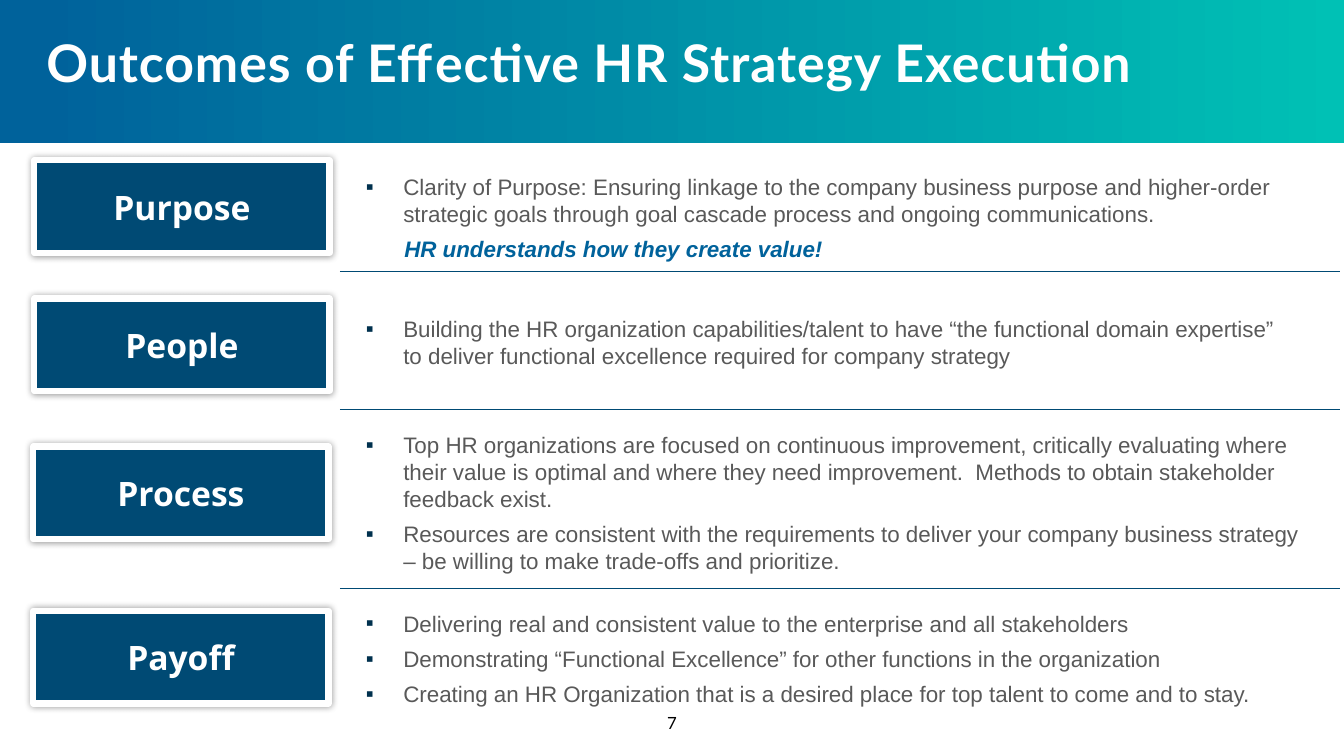
from dataclasses import dataclass

from lxml import etree
from pptx import Presentation
from pptx.dml.color import RGBColor
from pptx.enum.shapes import MSO_CONNECTOR, MSO_SHAPE
from pptx.enum.text import MSO_ANCHOR, MSO_AUTO_SIZE, PP_ALIGN
from pptx.oxml.ns import qn
from pptx.util import Inches, Pt

RECTANGLE = MSO_SHAPE.RECTANGLE
STRAIGHT = MSO_CONNECTOR.STRAIGHT
TOP, MIDDLE = MSO_ANCHOR.TOP, MSO_ANCHOR.MIDDLE
LEFT, CENTER = PP_ALIGN.LEFT, PP_ALIGN.CENTER
FIT_SHAPE, NO_FIT = MSO_AUTO_SIZE.SHAPE_TO_FIT_TEXT, MSO_AUTO_SIZE.NONE
COMPARISON_LAYOUT = 4


@dataclass(frozen=True)
class Theme:
    blue: str = "00629B"
    teal: str = "00C1B5"
    navy: str = "004A74"
    bullet: str = "00314E"
    body: str = "595959"
    white: str = "FFFFFF"
    black: str = "000000"
    title_font: str = "Lato"
    label_font: str = "Open Sans"
    body_font: str = "Arial"
    title_size: int = 37
    label_size: int = 24
    body_size: int = 16
    number_size: int = 12


@dataclass(frozen=True)
class Outcome:
    label: str
    label_box: tuple
    list_box: tuple
    bullets: tuple
    highlight: str = ""


THEME = Theme()
RULE_LEFT, RULE_RIGHT = 3.37, 13.29
RULE_TOPS = (2.69, 4.06, 5.84)
OUTCOMES = (
    Outcome("Purpose", (0.34, 1.59, 2.93, 0.92), (3.4, 1.67, 9.44, 0.99), (
        "Clarity of Purpose: Ensuring linkage to the company business purpose and higher-order "
        "strategic goals through goal cascade process and ongoing communications.",
    ), "HR understands how they create value!"),
    Outcome("People", (0.34, 2.96, 2.93, 0.92), (3.4, 3.08, 9.48, 0.64), (
        "Building the HR organization capabilities/talent to have “the functional domain expertise” "
        "to deliver functional excellence required for company strategy",
    )),
    Outcome("Process", (0.33, 4.43, 2.93, 0.92), (3.4, 4.23, 9.59, 1.53), (
        "Top HR organizations are focused on continuous improvement, critically evaluating where "
        "their value is optimal and where they need improvement.  Methods to obtain stakeholder "
        "feedback exist.",
        "Resources are consistent with the requirements to deliver your company business strategy "
        "– be willing to make trade-offs and prioritize.",
    )),
    Outcome("Payoff", (0.33, 6.06, 2.93, 0.92), (3.4, 6, 9.59, 1.08), (
        "Delivering real and consistent value to the enterprise and all stakeholders",
        "Demonstrating “Functional Excellence” for other functions in the organization",
        "Creating an HR Organization that is a desired place for top talent to come and to stay.",
    )),
)


def color(value):
    return RGBColor.from_string(value)


def place(shape, box):
    shape.left, shape.top, shape.width, shape.height = map(Inches, box)


def set_margins(frame, horizontal, vertical):
    frame.margin_left = frame.margin_right = Inches(horizontal)
    frame.margin_top = frame.margin_bottom = Inches(vertical)


def style_runs(paragraph, font, size, ink, bold=False, italic=False):
    for run in paragraph.runs:
        run.font.name = font
        run.font.size = Pt(size)
        run.font.color.rgb = color(ink)
        run.font.bold = bold
        run.font.italic = italic


def set_indent(paragraph, margin, first_line, bullet=None):
    properties = paragraph._p.get_or_add_pPr()
    properties.set("marL", str(Inches(margin)))
    properties.set("indent", str(Inches(first_line)))
    if bullet:
        bullet_color = etree.SubElement(properties, qn("a:buClr"))
        etree.SubElement(bullet_color, qn("a:srgbClr"), val=THEME.bullet)
        etree.SubElement(properties, qn("a:buFont"), typeface=THEME.body_font)
        etree.SubElement(properties, qn("a:buChar"), char=bullet)
    else:
        etree.SubElement(properties, qn("a:buNone"))


def add_glow(shape):
    effects = etree.SubElement(shape._element.spPr, qn("a:effectLst"))
    shadow = etree.SubElement(effects, qn("a:outerShdw"), blurRad=str(Pt(5)), dist="0", dir="0")
    ink = etree.SubElement(shadow, qn("a:srgbClr"), val=THEME.black)
    etree.SubElement(ink, qn("a:alpha"), val="40000")


def paint_background(slide, panel_box):
    fill = slide.background.fill
    fill.gradient()
    fill.gradient_angle = 0
    stops = ((0.03, THEME.blue), (1, THEME.teal))
    for stop, (position, ink) in zip(fill.gradient_stops, stops):
        stop.position = position
        stop.color.rgb = color(ink)
    panel = slide.shapes.add_shape(RECTANGLE, *map(Inches, panel_box))
    panel.shadow.inherit = False
    panel.fill.solid()
    panel.fill.fore_color.rgb = color(THEME.white)
    panel.line.fill.background()
    slide.shapes._spTree.insert(2, panel._element)


def fill_title(title, box, text):
    place(title, box)
    frame = title.text_frame
    frame.text = text
    frame.word_wrap = True
    frame.auto_size = NO_FIT
    frame.vertical_anchor = TOP
    set_margins(frame, 0, 0)
    paragraph = frame.paragraphs[0]
    paragraph.alignment = LEFT
    paragraph.line_spacing = 0.8
    style_runs(paragraph, THEME.title_font, THEME.title_size, THEME.white, bold=True)
    for run in paragraph.runs:
        run.font._element.set("spc", "70")


def add_label(slide, box, text):
    label = slide.shapes.add_shape(RECTANGLE, *map(Inches, box))
    label.fill.solid()
    label.fill.fore_color.rgb = color(THEME.navy)
    label.line.color.rgb = color(THEME.white)
    label.line.width = Pt(4.5)
    add_glow(label)
    frame = label.text_frame
    frame.text = text
    frame.vertical_anchor = MIDDLE
    set_margins(frame, 0.05, 0.05)
    paragraph = frame.paragraphs[0]
    paragraph.alignment = CENTER
    style_runs(paragraph, THEME.label_font, THEME.label_size, THEME.white, bold=True)


def fill_list(body, box, bullets, highlight):
    place(body, box)
    frame = body.text_frame
    frame.text = "\n".join(bullets + ((highlight,) if highlight else ()))
    frame.word_wrap = True
    frame.auto_size = FIT_SHAPE
    frame.vertical_anchor = TOP
    set_margins(frame, 0.1, 0.05)
    for index, paragraph in enumerate(frame.paragraphs):
        if index < len(bullets):
            set_indent(paragraph, 0.5, -0.37, "▪")
            style_runs(paragraph, THEME.body_font, THEME.body_size, THEME.body)
        else:
            set_indent(paragraph, 0.25, 0.26)
            style_runs(paragraph, THEME.body_font, THEME.body_size, THEME.blue, True, True)
        paragraph.alignment = LEFT
        paragraph.space_before = Pt(6 if index else 0)


def add_rule(slide, left, right, top):
    rule = slide.shapes.add_connector(STRAIGHT, Inches(left), Inches(top), Inches(right), Inches(top))
    rule.line.color.rgb = color(THEME.navy)
    rule.line.width = Pt(0.5)
    etree.SubElement(rule._element.spPr, qn("a:effectLst"))


def add_page_number(slide, box, number):
    frame = slide.shapes.add_textbox(*map(Inches, box)).text_frame
    frame.text = number
    frame.word_wrap = True
    paragraph = frame.paragraphs[0]
    paragraph.alignment = CENTER
    style_runs(paragraph, THEME.title_font, THEME.number_size, THEME.black)


def build_outcomes_slide(presentation):
    slide = presentation.slides.add_slide(presentation.slide_layouts[COMPARISON_LAYOUT])
    paint_background(slide, (0, 1.42, 13.33, 6.08))
    fill_title(slide.shapes.title, (0.46, 0.42, 11.54, 0.84), "Outcomes of Effective HR Strategy Execution")
    for index, outcome in enumerate(OUTCOMES, start=1):
        add_label(slide, outcome.label_box, outcome.label)
        fill_list(slide.placeholders[index], outcome.list_box, outcome.bullets, outcome.highlight)
    for top in RULE_TOPS:
        add_rule(slide, RULE_LEFT, RULE_RIGHT, top)
    add_page_number(slide, (0, 7.02, 13.33, 0.4), "7")


def main():
    presentation = Presentation()
    presentation.slide_width, presentation.slide_height = Inches(13.33), Inches(7.5)
    build_outcomes_slide(presentation)
    presentation.save("out.pptx")


if __name__ == "__main__":
    main()
